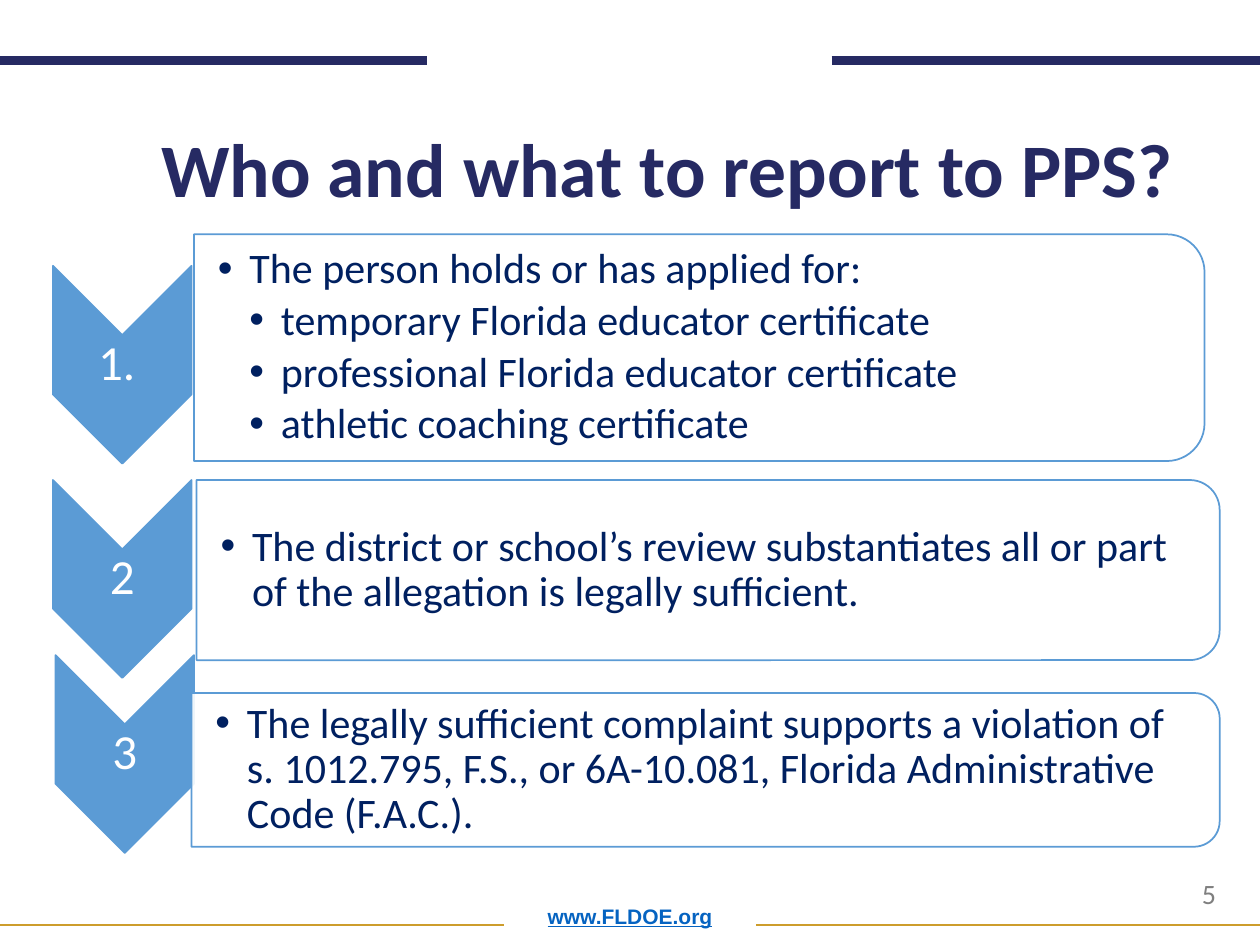
from lxml.etree import SubElement
from pptx import Presentation
from pptx.dml.color import RGBColor
from pptx.enum.shapes import MSO_CONNECTOR, MSO_SHAPE
from pptx.enum.text import MSO_ANCHOR, PP_ALIGN
from pptx.oxml.ns import qn
from pptx.util import Inches, Pt

THEME = {
    "navy": "262A63", "gold": "CD9D2C", "blue": "5B9BD5", "white": "FFFFFF",
    "title": {"name": "Calibri", "size": 43.2, "color": "262A63", "bold": True},
    "number": {"name": "Calibri", "size": 28, "color": "FFFFFF"},
    "body": {"name": "Calibri", "size": 24, "color": "002060"},
    "address": {"name": "Arial", "size": 12, "color": "0563C1", "bold": True, "underline": True},
    "page": {"name": "Calibri", "size": 16, "color": "7F7F7F"},
}

TITLE = "Who and what to report to PPS?"
ADDRESS = "www.FLDOE.org"
PAGE = "5"
# Each step: label, chevron (left, top), panel (left, top, width, height), (level, text) items
STEPS = [
    ("1. ", (0.42, 2.11), (1.54, 1.86, 8.02, 1.8), [
        (1, "The person holds or has applied for:"),
        (2, "temporary Florida educator certificate"),
        (2, "professional Florida educator certificate"),
        (2, "athletic coaching certificate"),
    ]),
    ("2", (0.42, 3.81), (1.56, 3.81, 8.12, 1.43), [
        (1, "The district or school’s review substantiates all or part "
            "of the allegation is legally sufficient."),
    ]),
    ("3", (0.44, 5.2), (1.52, 5.5, 8.16, 1.22), [
        (1, "The legally sufficient complaint supports a violation of\v"
            "s. 1012.795, F.S., or 6A-10.081, Florida Administrative Code (F.A.C.)."),
    ]),
]
# Each rule: start x, end x, y, colour, weight
RULES = [
    (0, 3.39, 0.48, "navy", 5), (6.6, 10, 0.48, "navy", 5),
    (0, 4, 7.34, "gold", 1), (6, 10, 7.34, "gold", 1),
]
CHEVRON_WIDTH, CHEVRON_HEIGHT = 1.1, 1.57
LABEL_HEIGHT = 0.47
INDENT = 0.25
DEFAULT_INSETS = (0.1, 0.05, 0.1, 0.05)
LABEL_INSETS = (0.02, 0.02, 0.02, 0.02)
BODY_INSETS = (0.19, 0.02, 0.02, 0.02)


def color(code):
    return RGBColor.from_string(code)


def style_run(run, style):
    for name, value in style.items():
        if name == "color":
            run.font.color.rgb = color(value)
        else:
            setattr(run.font, name, Pt(value) if name == "size" else value)


def add_bullet(paragraph, level):
    properties = paragraph._p.get_or_add_pPr()
    properties.set("marL", str(Inches(INDENT * level)))
    properties.set("indent", str(-Inches(INDENT)))
    SubElement(properties, qn("a:buFont")).set("typeface", "Arial")
    SubElement(properties, qn("a:buChar")).set("char", "•")


def add_text(slide, box, items, style, insets=DEFAULT_INSETS, anchor=MSO_ANCHOR.MIDDLE,
             align=PP_ALIGN.LEFT, space_after=0):
    """Write (level, text) items in a text box; level 0 has no bullet."""
    frame = slide.shapes.add_textbox(*map(Inches, box)).text_frame
    frame.word_wrap = True
    frame.vertical_anchor = anchor
    for side, inset in zip(("left", "top", "right", "bottom"), insets):
        setattr(frame, f"margin_{side}", Inches(inset))
    for index, (level, text) in enumerate(items):
        paragraph = frame.add_paragraph() if index else frame.paragraphs[0]
        paragraph.text = text
        if level:
            add_bullet(paragraph, level)
        layout = {"alignment": align, "line_spacing": 0.9, "space_after": Pt(space_after)}
        for name, value in layout.items():
            setattr(paragraph, name, value)
        for run in paragraph.runs:
            style_run(run, style)


def add_turned_shape(slide, kind, box, fill):
    """Place a shape turned by 90 degrees so that it fills the given box."""
    left, top, width, height = box
    shift = (width - height) / 2
    shape = slide.shapes.add_shape(
        kind, *map(Inches, (left + shift, top - shift, height, width)))
    shape.rotation = 90
    shape.shadow.inherit = False
    shape.fill.solid()
    shape.fill.fore_color.rgb = color(fill)
    shape.line.color.rgb = color(THEME["blue"])
    shape.line.width = Pt(1)
    return shape


def add_rule(slide, start, end, y, color_name, weight):
    rule = slide.shapes.add_connector(
        MSO_CONNECTOR.STRAIGHT, *map(Inches, (start, y, end, y)))
    rule.line.color.rgb = color(THEME[color_name])
    rule.line.width = Pt(weight)
    SubElement(rule._element.spPr, qn("a:effectLst"))


def add_step(slide, label, chevron, panel, items):
    left, top = chevron
    add_turned_shape(slide, MSO_SHAPE.CHEVRON,
                     (left, top, CHEVRON_WIDTH, CHEVRON_HEIGHT), THEME["blue"])
    label_top = top + (CHEVRON_HEIGHT - LABEL_HEIGHT) / 2
    add_text(slide, (left, label_top, CHEVRON_WIDTH, LABEL_HEIGHT), [(0, label)],
             THEME["number"], LABEL_INSETS, align=PP_ALIGN.CENTER)

    shape = add_turned_shape(slide, MSO_SHAPE.ROUND_2_SAME_RECTANGLE, panel, THEME["white"])
    fill_color = shape._element.spPr.find(qn("a:solidFill"))[0]
    SubElement(fill_color, qn("a:alpha")).set("val", "90000")
    left, top, width, height = panel
    inner = (left, top + 0.05 * height, width - 0.05 * height, 0.9 * height)
    add_text(slide, inner, items, THEME["body"], BODY_INSETS, space_after=3.6)


def main():
    presentation = Presentation()
    presentation.slide_width, presentation.slide_height = Inches(10), Inches(7.5)
    slide = presentation.slides.add_slide(presentation.slide_layouts[6])
    for rule in RULES:
        add_rule(slide, *rule)
    add_text(slide, (0.69, 7, 8.62, 0.42), [(0, ADDRESS)], THEME["address"],
             anchor=MSO_ANCHOR.BOTTOM, align=PP_ALIGN.CENTER)
    add_text(slide, (9.44, 6.92, 0.52, 0.37), [(0, PAGE)], THEME["page"])
    add_text(slide, (1.17, 0.5, 8.25, 1.25), [(0, TITLE)], THEME["title"],
             anchor=MSO_ANCHOR.BOTTOM, align=PP_ALIGN.CENTER)
    for step in STEPS:
        add_step(slide, *step)
    presentation.save("out.pptx")


if __name__ == "__main__":
    main()
